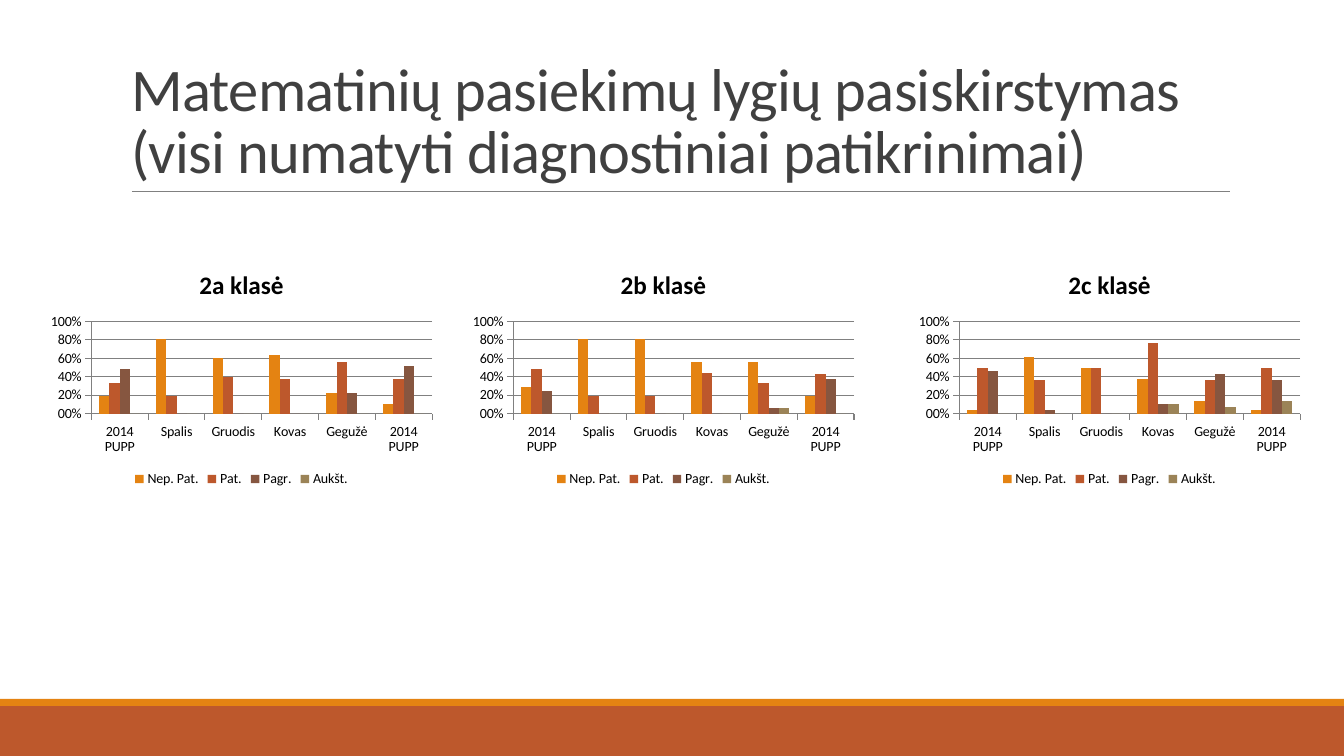
from lxml.etree import SubElement
from pptx import Presentation
from pptx.chart.data import CategoryChartData
from pptx.dml.color import RGBColor
from pptx.enum.chart import XL_CHART_TYPE, XL_LEGEND_POSITION, XL_TICK_MARK
from pptx.enum.shapes import MSO_CONNECTOR, MSO_SHAPE
from pptx.enum.text import MSO_ANCHOR, MSO_AUTO_SIZE, PP_ALIGN
from pptx.oxml.ns import qn
from pptx.util import Pt

PX = 914400 / 100.8
COLOURS = {
    "orange": "E48312",
    "rust": "BD582C",
    "brown": "865640",
    "olive": "9B8357",
    "grey": "808080",
    "title": "404040",
    "black": "000000",
}
MONTHS = ["2014 PUPP", "Spalis", "Gruodis", "Kovas", "Gegužė", "2014 PUPP"]
LEVELS = {"Nep. Pat.": "orange", "Pat.": "rust", "Pagr.": "brown", "Aukšt.": "olive"}
CLASSES = [
    ("2a klasė", 43, [
        [0.19, 0.81, 0.6, 0.63, 0.22, 0.1],
        [0.33, 0.19, 0.4, 0.37, 0.56, 0.38],
        [0.48, 0, 0, 0, 0.22, 0.52],
        [0, 0, 0, 0, 0, 0],
    ]),
    ("2b klasė", 465, [
        [0.29, 0.81, 0.81, 0.56, 0.56, 0.19],
        [0.48, 0.19, 0.19, 0.44, 0.33, 0.43],
        [0.24, 0, 0, 0, 0.06, 0.38],
        [0, 0, 0, 0, 0.06, 0],
    ]),
    ("2c klasė", 911, [
        [0.04, 0.61, 0.5, 0.38, 0.14, 0.04],
        [0.5, 0.36, 0.5, 0.76, 0.36, 0.5],
        [0.46, 0.04, 0, 0.1, 0.43, 0.36],
        [0, 0, 0, 0.1, 0.07, 0.14],
    ]),
]


def px(*lengths):
    return [round(length * PX) for length in lengths]


def set_all(target, values):
    for name, value in values.items():
        setattr(target, name, value)


deck = Presentation()
deck.slide_width, deck.slide_height = px(1344, 756)
page = deck.slides.add_slide(deck.slide_layouts[5])

for colour, top, height in [("rust", 706, 50), ("orange", 699, 7)]:
    band = page.shapes.add_shape(MSO_SHAPE.RECTANGLE, *px(0, top, 1344, height))
    band.shadow.inherit = False
    band.fill.solid()
    band.fill.fore_color.rgb = RGBColor.from_string(COLOURS[colour])
    band.line.fill.background()

rule = page.shapes.add_connector(MSO_CONNECTOR.STRAIGHT, *px(132, 191, 1230, 191))
rule.line.color.rgb = RGBColor.from_string(COLOURS["grey"])
rule.line.width = Pt(0.5)
SubElement(rule._element.spPr, qn("a:effectLst"))

title = page.shapes.title
set_all(title, dict(zip(["left", "top", "width", "height"], px(121, 31, 1109, 160))))
set_all(title.text_frame, {
    "text": "Matematinių pasiekimų lygių pasiskirstymas (visi numatyti diagnostiniai patikrinimai)",
    "word_wrap": True,
    "auto_size": MSO_AUTO_SIZE.NONE,
    "vertical_anchor": MSO_ANCHOR.BOTTOM,
})
para = title.text_frame.paragraphs[0]
set_all(para, {"alignment": PP_ALIGN.LEFT, "line_spacing": 0.85})
span = para.runs[0]
set_all(span.font, {"name": "Calibri", "size": Pt(43.2), "bold": False})
span.font.color.rgb = RGBColor.from_string(COLOURS["title"])
span.font._element.set("spc", "-50")

for class_name, left, rows in CLASSES:
    data = CategoryChartData(number_format="0%")
    data.categories = MONTHS
    for level, values in zip(LEVELS, rows):
        data.add_series(level, values)
    frame = page.shapes.add_chart(
        XL_CHART_TYPE.COLUMN_CLUSTERED, *px(left, 253, 397, 238), data
    )
    chart = frame.chart
    set_all(chart.font, {"name": "Calibri", "size": Pt(10)})
    chart.font.color.rgb = RGBColor.from_string(COLOURS["black"])

    chart.has_title = True
    chart.chart_title.include_in_layout = False
    chart.chart_title.text_frame.text = class_name
    heading = chart.chart_title.text_frame.paragraphs[0].runs[0]
    set_all(heading.font, {"name": "Calibri", "size": Pt(18), "bold": True})
    heading.font.color.rgb = RGBColor.from_string(COLOURS["black"])

    chart.has_legend = True
    set_all(chart.legend, {
        "position": XL_LEGEND_POSITION.BOTTOM,
        "include_in_layout": False,
    })

    set_all(chart.value_axis, {
        "minimum_scale": 0,
        "maximum_scale": 1,
        "major_unit": 0.2,
        "has_major_gridlines": True,
    })
    set_all(chart.value_axis.tick_labels, {
        "number_format": "#,#00%",
        "number_format_is_linked": False,
    })
    for axis in [chart.category_axis, chart.value_axis]:
        axis.major_tick_mark = XL_TICK_MARK.OUTSIDE
    for part in [chart.category_axis, chart.value_axis, chart.value_axis.major_gridlines]:
        part.format.line.color.rgb = RGBColor.from_string(COLOURS["grey"])
        part.format.line.width = Pt(0.75)

    plot = chart.plots[0]
    set_all(plot, {"gap_width": 150, "overlap": 0, "vary_by_categories": False})
    for series, colour in zip(plot.series, LEVELS.values()):
        series.format.fill.solid()
        series.format.fill.fore_color.rgb = RGBColor.from_string(COLOURS[colour])

deck.save("out.pptx")
